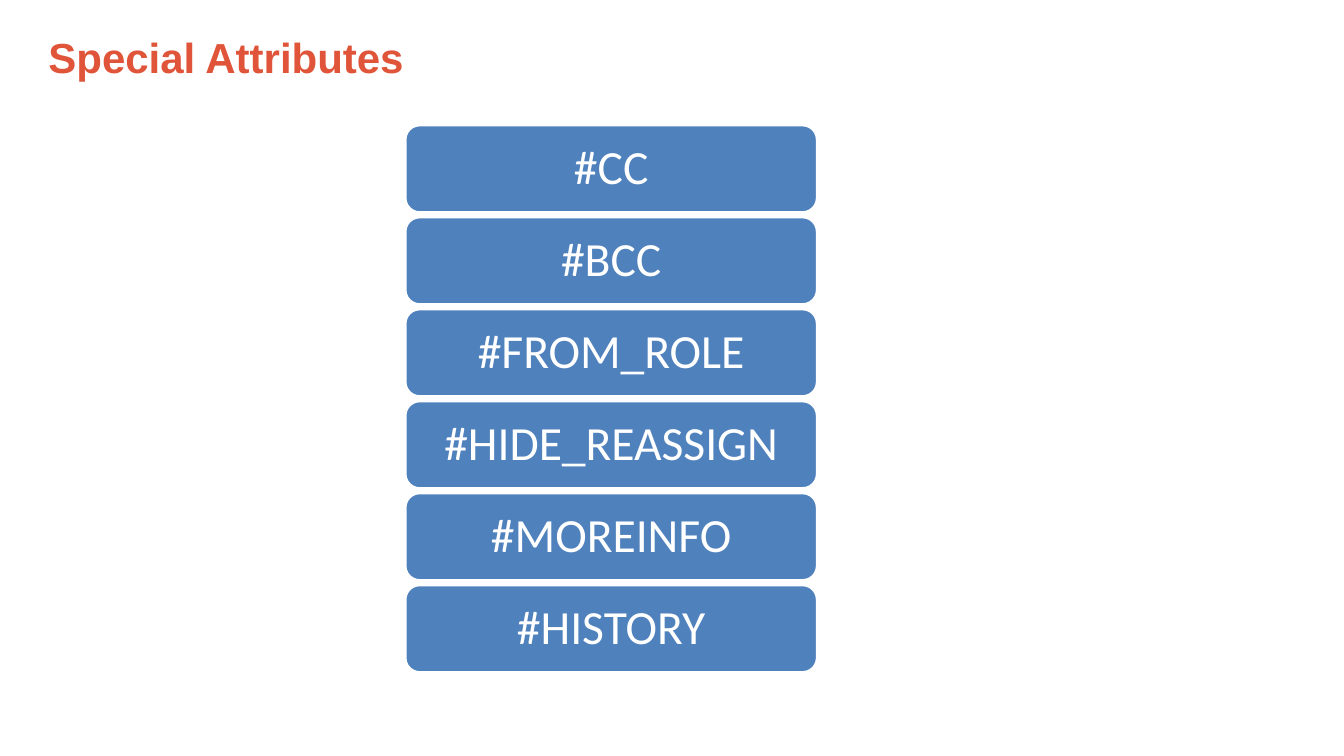
"""Build the Special Attributes slide: a title above a column of attribute boxes."""
from pptx import Presentation
from pptx.dml.color import RGBColor
from pptx.enum.shapes import MSO_SHAPE
from pptx.enum.text import MSO_ANCHOR, PP_ALIGN
from pptx.util import Pt

TITLE = "Special Attributes"
ATTRIBUTES = ["#CC", "#BCC", "#FROM_ROLE", "#HIDE_REASSIGN", "#MOREINFO", "#HISTORY"]

ORANGE = RGBColor(0xE0, 0x54, 0x39)
BLUE = RGBColor(0x4F, 0x81, 0xBD)
WHITE = RGBColor(0xFF, 0xFF, 0xFF)

BOX_LEFT, BOX_TOP = 289.4, 89.3
BOX_WIDTH, BOX_HEIGHT = 294.4, 62.6
PITCH = 65.7


def set_font(p, name, size, color, bold=False):
    """Format a whole paragraph."""
    p.font.name, p.font.size, p.font.bold = name, Pt(size), bold
    p.font.color.rgb = color


def add_title(s):
    """Place and format the title placeholder."""
    title = s.shapes.title
    title.left, title.top, title.width, title.height = Pt(27.4), Pt(0), Pt(699), Pt(81.4)
    tf = title.text_frame
    tf.text = TITLE
    tf.vertical_anchor = MSO_ANCHOR.MIDDLE
    p = tf.paragraphs[0]
    p.alignment = PP_ALIGN.LEFT
    set_font(p, "Arial", 30, ORANGE, bold=True)


def add_box(s, row, text):
    """Add one attribute box in its row."""
    sp = s.shapes.add_shape(MSO_SHAPE.ROUNDED_RECTANGLE, Pt(BOX_LEFT), Pt(BOX_TOP + row * PITCH),
                            Pt(BOX_WIDTH), Pt(BOX_HEIGHT))
    sp.shadow.inherit = False
    sp.fill.solid()
    sp.fill.fore_color.rgb = BLUE
    sp.line.color.rgb = WHITE
    sp.line.width = Pt(2)
    tf = sp.text_frame
    tf.text = text
    tf.word_wrap = True
    tf.vertical_anchor = MSO_ANCHOR.MIDDLE
    tf.margin_left = tf.margin_right = Pt(10)
    tf.margin_top = tf.margin_bottom = Pt(5)
    p = tf.paragraphs[0]
    p.alignment = PP_ALIGN.CENTER
    p.line_spacing = 0.9
    set_font(p, "Calibri", 34, WHITE)


def main():
    """Create and save the slide."""
    prs = Presentation()
    prs.slide_width, prs.slide_height = Pt(960), Pt(540)
    s = prs.slides.add_slide(prs.slide_layouts[5])
    add_title(s)
    for row, text in enumerate(ATTRIBUTES):
        add_box(s, row, text)
    prs.save("out.pptx")


if __name__ == "__main__":
    main()
